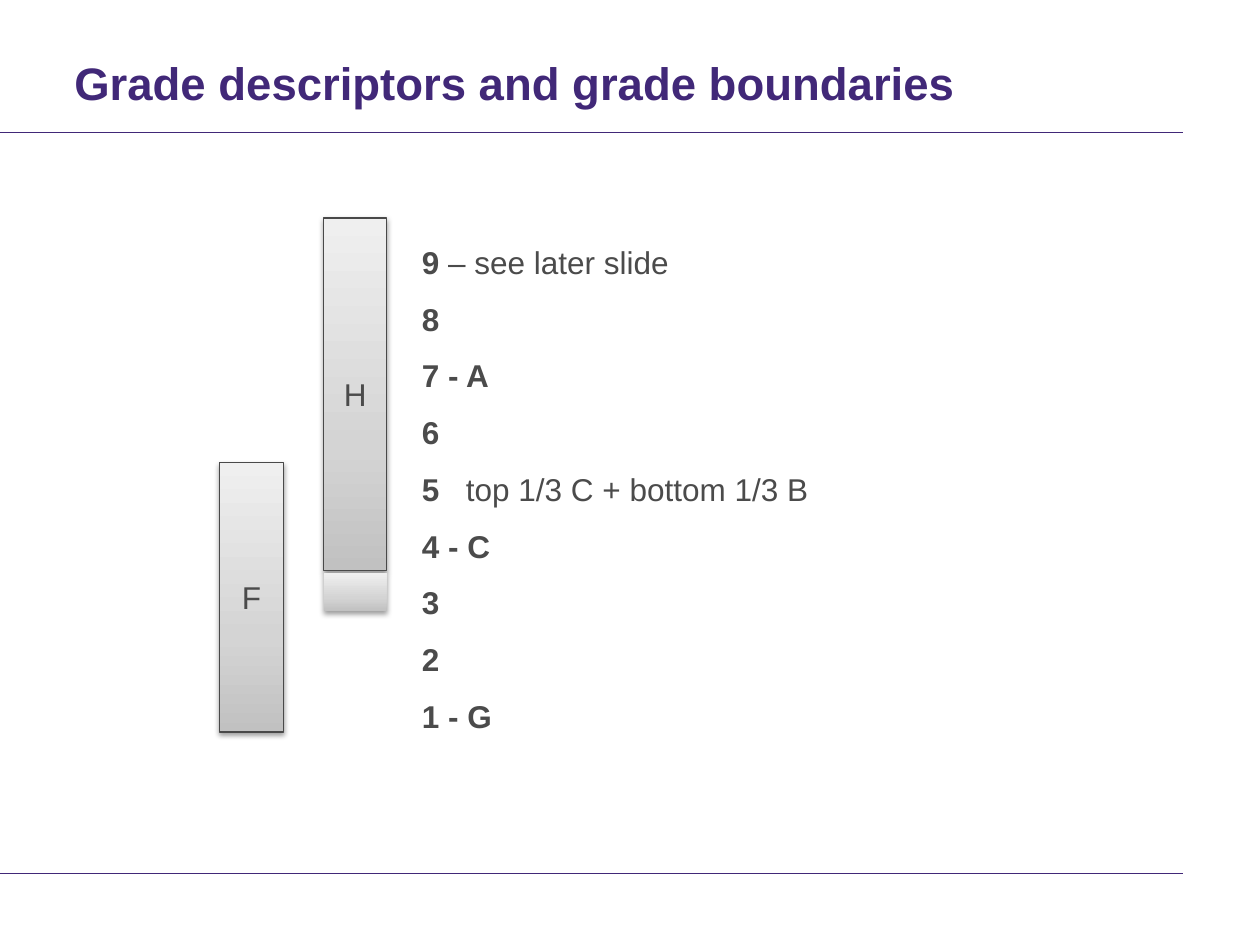
from dataclasses import dataclass

from lxml import etree
from pptx import Presentation
from pptx.dml.color import RGBColor
from pptx.enum.shapes import MSO_CONNECTOR, MSO_SHAPE
from pptx.enum.text import MSO_ANCHOR, PP_ALIGN
from pptx.oxml.ns import qn
from pptx.util import Inches, Pt

STRAIGHT = MSO_CONNECTOR.STRAIGHT
RECTANGLE = MSO_SHAPE.RECTANGLE
MIDDLE = MSO_ANCHOR.MIDDLE
CENTER = PP_ALIGN.CENTER


@dataclass(frozen=True)
class Theme:
    font: str = "Arial"
    title_size: float = 26
    body_size: float = 18
    accent: str = "412878"
    text: str = "4B4B4B"
    outline: str = "494949"
    background: str = "FFFFFF"
    shadow: str = "000000"
    gradient: tuple = ((0, "C1C1C1"), (35, "D4D4D4"), (100, "EFEFEF"))


GRADES = [
    ("9 ", "– see later slide"),
    ("8", ""),
    ("7 - A", ""),
    ("6", ""),
    ("5\t", "top 1/3 C + bottom 1/3 B"),
    ("4 - C", ""),
    ("3", ""),
    ("2", ""),
    ("1 - G", ""),
]

# left, top, width, height, label, outlined
TIER_BARS = [
    (2.57, 1.73, 0.5, 2.8, "H", True),
    (1.74, 3.67, 0.51, 2.14, "F", True),
    (2.57, 4.55, 0.5, 0.3, "", False),
]


def add_element(parent, tag, **attributes):
    values = {name: str(value) for name, value in attributes.items()}
    return etree.SubElement(parent, qn(tag), values)


def set_attributes(target, values):
    for name, value in values.items():
        setattr(target, name, value)


class SlideBuilder:
    def __init__(self, slide, theme):
        self.slide = slide
        self.theme = theme

    def add_run(self, paragraph, text, size, color, bold=False):
        run = paragraph.add_run()
        run.text = text
        set_attributes(run.font, {"name": self.theme.font, "size": Pt(size), "bold": bold})
        run.font.color.rgb = RGBColor.from_string(color)

    def add_text_box(self, left, top, width, height):
        box = self.slide.shapes.add_textbox(*map(Inches, (left, top, width, height)))
        box.text_frame.word_wrap = True
        return box

    def add_title(self, text):
        frame = self.add_text_box(0.59, 0.48, 8.8, 0.47).text_frame
        set_attributes(frame, {"margin_left": 0, "margin_top": 0, "margin_bottom": 0})
        paragraph = frame.paragraphs[0]
        paragraph.line_spacing = Pt(28)
        self.add_run(paragraph, text, self.theme.title_size, self.theme.accent, True)

    def add_rule(self, top):
        """Draw a horizontal line from the left edge of the slide."""
        rule = self.slide.shapes.add_connector(
            STRAIGHT, 0, Inches(top), Inches(9.39), Inches(top)
        )
        rule.line.color.rgb = RGBColor.from_string(self.theme.accent)
        rule.line.width = Pt(0.6)
        add_element(rule._element.spPr, "a:effectLst")

    def add_grade_list(self, grades):
        box = self.add_text_box(3.25, 1.73, 5.83, 4.19)
        box.fill.solid()
        box.fill.fore_color.rgb = RGBColor.from_string(self.theme.background)
        frame = box.text_frame
        for index, (grade, note) in enumerate(grades):
            paragraph = frame.add_paragraph() if index else frame.paragraphs[0]
            if "\t" in grade:
                tabs = add_element(paragraph._p.get_or_add_pPr(), "a:tabLst")
                add_element(tabs, "a:tab", pos=Inches(0.35), algn="l")
            paragraph.line_spacing = 1.5
            self.add_run(paragraph, grade, self.theme.body_size, self.theme.text, True)
            if note:
                self.add_run(paragraph, note, self.theme.body_size, self.theme.text)

    def apply_gradient(self, shape):
        shape.fill.gradient()
        shape.fill.gradient_angle = 90
        stops = shape._element.spPr.find(".//" + qn("a:gsLst"))
        for stop in list(stops):
            stops.remove(stop)
        for position, color in self.theme.gradient:
            stop = add_element(stops, "a:gs", pos=position * 1000)
            add_element(stop, "a:srgbClr", val=color)

    def apply_shadow(self, shape):
        shape.shadow.inherit = False
        effects = shape._element.spPr.find(qn("a:effectLst"))
        shadow = add_element(
            effects, "a:outerShdw", blurRad=Pt(3.1), dist=Pt(1.6),
            dir=90 * 60000, rotWithShape=0,
        )
        color = add_element(shadow, "a:srgbClr", val=self.theme.shadow)
        add_element(color, "a:alpha", val=38000)

    def add_tier_bar(self, left, top, width, height, label, outlined):
        bar = self.slide.shapes.add_shape(
            RECTANGLE, *map(Inches, (left, top, width, height))
        )
        self.apply_gradient(bar)
        if outlined:
            bar.line.color.rgb = RGBColor.from_string(self.theme.outline)
            bar.line.width = Pt(0.75)
        else:
            bar.line.fill.background()
        self.apply_shadow(bar)
        if label:
            bar.text_frame.vertical_anchor = MIDDLE
            paragraph = bar.text_frame.paragraphs[0]
            paragraph.alignment = CENTER
            self.add_run(paragraph, label, self.theme.body_size, self.theme.text)


def main():
    presentation = Presentation()
    presentation.slide_width = Inches(10)
    presentation.slide_height = Inches(7.5)
    slide = presentation.slides.add_slide(presentation.slide_layouts[6])
    builder = SlideBuilder(slide, Theme())

    for top in (1.05, 6.93):
        builder.add_rule(top)
    builder.add_grade_list(GRADES)
    for bar in TIER_BARS:
        builder.add_tier_bar(*bar)
    builder.add_title("Grade descriptors and grade boundaries")

    presentation.save("out.pptx")


if __name__ == "__main__":
    main()
